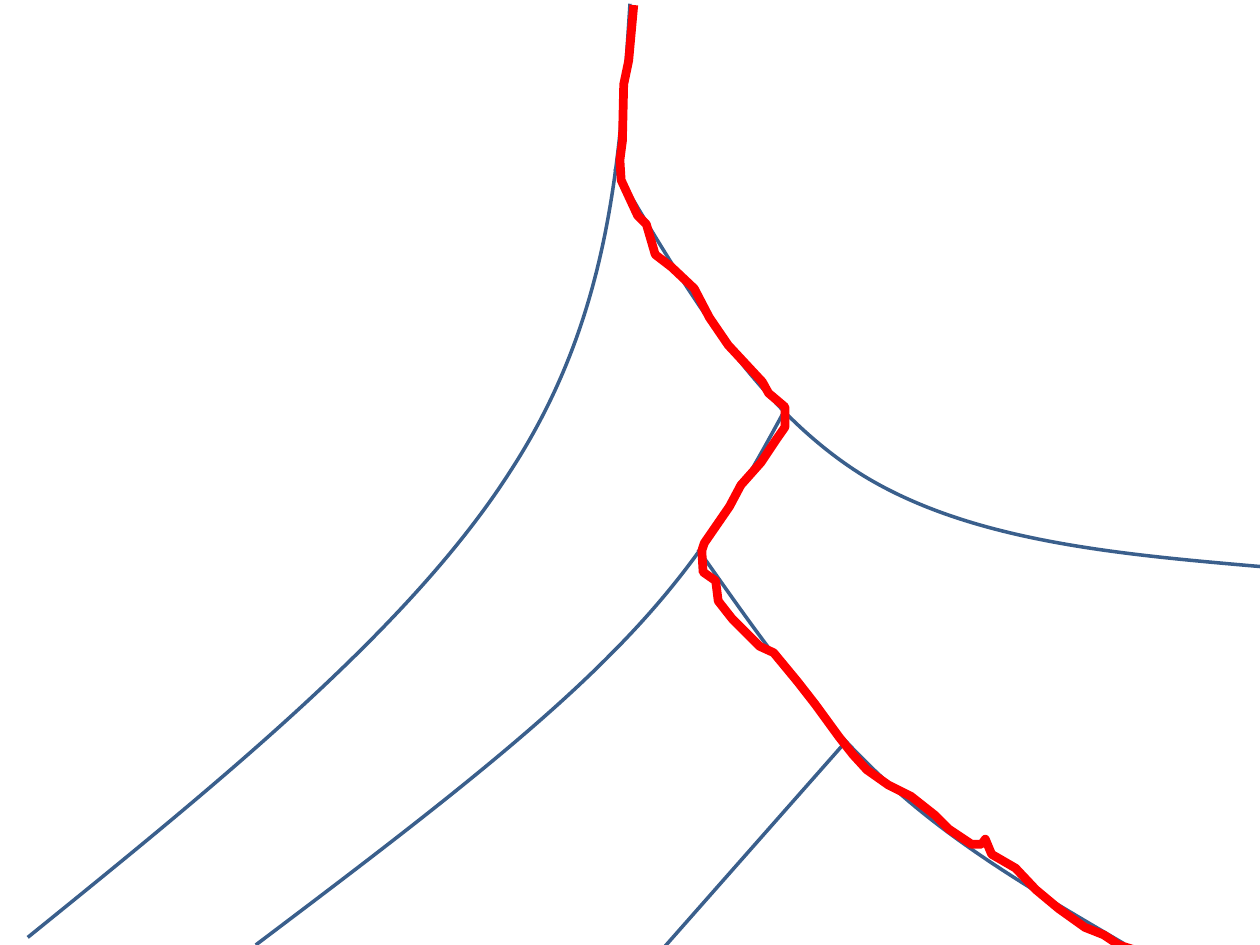
from dataclasses import dataclass

from lxml.etree import SubElement
from pptx import Presentation
from pptx.dml.color import RGBColor
from pptx.enum.shapes import MSO_CONNECTOR
from pptx.oxml.ns import qn
from pptx.util import Inches, Pt


@dataclass(frozen=True)
class Theme:
    branch: RGBColor = RGBColor(0x3A, 0x5F, 0x8C)
    branch_width: int = 2
    route: RGBColor = RGBColor(0xFF, 0x00, 0x00)
    route_width: int = 5


THEME = Theme()

# Smooth branches: a start, then two handles and an end for each Bezier arc (inches)
BRANCHES = [
    [(5, 0.03), (4.92, 1.27), (4.85, 2.51), (4.05, 3.74),
     (3.26, 4.98), (1.74, 6.21), (0.22, 7.44)],
    [(4.88, 1.34), (5.44, 2.29), (6, 3.25), (6.86, 3.78),
     (7.72, 4.3), (8.88, 4.4), (10.04, 4.5)],
    [(6.22, 3.27), (5.89, 3.88), (5.55, 4.49), (4.85, 5.19),
     (4.15, 5.9), (3.09, 6.7), (2.03, 7.5)],
    [(5.54, 4.36), (5.99, 5), (6.44, 5.65), (7, 6.17),
     (7.56, 6.7), (8.24, 7.09), (8.92, 7.49)],
]
STRAIGHT_BRANCH = [(6.7, 5.9), (5.19, 7.61)]

# Hand-drawn route: the turning points, from the top down through each fork
ROUTE = [
    # Trunk
    (5.03, 0.04), (4.99, 0.48), (4.95, 0.67), (4.94, 1.12), (4.92, 1.27),
    (4.93, 1.43),
    # To the first fork
    (5.06, 1.71), (5.13, 1.78), (5.2, 2.02), (5.33, 2.12), (5.51, 2.29),
    (5.63, 2.52), (5.78, 2.74), (6.05, 3.03), (6.1, 3.12), (6.23, 3.23),
    (6.23, 3.39),
    # Back to the second fork
    (6.16, 3.49), (6.04, 3.67), (5.88, 3.85), (5.79, 4.02), (5.59, 4.31),
    (5.57, 4.37), (5.58, 4.54),
    # To the third fork
    (5.68, 4.61), (5.7, 4.77), (5.81, 4.91), (6.03, 5.13), (6.14, 5.18),
    (6.33, 5.41), (6.47, 5.59), (6.66, 5.85),
    # On to the lower right
    (6.77, 5.99), (6.88, 6.11), (7.05, 6.23), (7.23, 6.32), (7.42, 6.47),
    (7.53, 6.58), (7.71, 6.7), (7.79, 6.7), (7.82, 6.66), (7.87, 6.78),
    (8.06, 6.89), (8.22, 7.06), (8.4, 7.21), (8.61, 7.36), (8.76, 7.42),
    (8.88, 7.5), (9.04, 7.55),
]


def set_line(sp, color, width):
    sp.line.color.rgb = color
    sp.line.width = Pt(width)
    SubElement(sp.line._get_or_add_ln(), qn("a:round"))


def add_path(s, points, color, width):
    start, *rest = [(Inches(x), Inches(y)) for x, y in points]
    builder = s.shapes.build_freeform(*start)
    builder.add_line_segments(rest, close=False)
    sp = builder.convert_to_shape()
    sp.fill.background()
    sp.shadow.inherit = False
    set_line(sp, color, width)
    return sp


def bend(sp):
    """Turn each three line segments into one cubic Bezier arc."""
    segments = list(sp._element.iter(qn("a:lnTo")))
    path_xml = segments[0].getparent()
    for i in range(0, len(segments), 3):
        arc = SubElement(path_xml, qn("a:cubicBezTo"))
        for segment in segments[i:i + 3]:
            arc.append(segment[0])
            path_xml.remove(segment)


def main():
    prs = Presentation()
    prs.slide_width, prs.slide_height = Inches(10), Inches(7.5)
    s = prs.slides.add_slide(prs.slide_layouts[6])

    # Branches
    for points in BRANCHES:
        bend(add_path(s, points, THEME.branch, THEME.branch_width))
    ends = [Inches(v) for point in STRAIGHT_BRANCH for v in point]
    line = s.shapes.add_connector(MSO_CONNECTOR.STRAIGHT, *ends)
    set_line(line, THEME.branch, THEME.branch_width)
    SubElement(line._element.spPr, qn("a:effectLst"))

    # Route
    add_path(s, ROUTE, THEME.route, THEME.route_width)

    prs.save("out.pptx")


if __name__ == "__main__":
    main()
